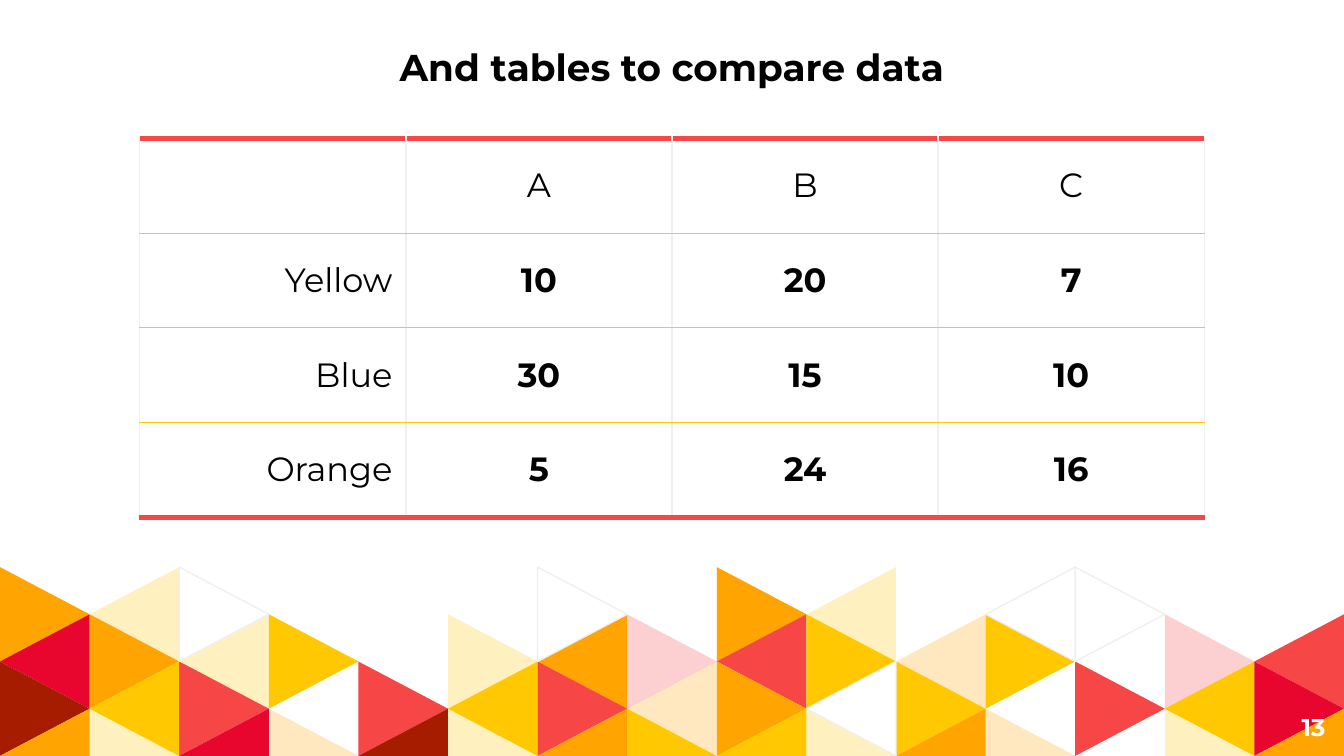
"""Build a slide with a comparison table above a band of coloured triangles."""
from lxml import etree
from pptx import Presentation
from pptx.dml.color import RGBColor
from pptx.enum.text import MSO_ANCHOR, PP_ALIGN
from pptx.oxml.ns import qn
from pptx.util import Inches, Pt

CENTER, RIGHT = PP_ALIGN.CENTER, PP_ALIGN.RIGHT
MIDDLE, BOTTOM = MSO_ANCHOR.MIDDLE, MSO_ANCHOR.BOTTOM
FONT = "Montserrat"

BLACK = RGBColor(0x00, 0x00, 0x00)
WHITE = RGBColor(0xFF, 0xFF, 0xFF)
GRAY = RGBColor(0xEF, 0xEF, 0xEF)
ORANGE = RGBColor(0xFF, 0xA4, 0x00)
YELLOW = RGBColor(0xFF, 0xC8, 0x00)
CORAL = RGBColor(0xF6, 0x46, 0x46)
CRIMSON = RGBColor(0xE8, 0x06, 0x2F)
BROWN = RGBColor(0xA6, 0x1C, 0x00)

WIDTH, HEIGHT = 10, 10 * 9 / 16
BAND_TOP = 4.22
PALE = 25
TILES = {
    "O": (ORANGE, None), "o": (ORANGE, PALE),
    "Y": (YELLOW, None), "y": (YELLOW, PALE),
    "R": (CORAL, None), "r": (CORAL, PALE),
    "E": (CRIMSON, None), "B": (BROWN, None), "W": (WHITE, None),
}
BAND = [
    "OyW...W.Oy.WW..",
    "EOCY.yOrRYoY.rR".replace("C", "y"),
    "BYR.RYRoOWY.RYE",
    "OyEoByOYYyOo.yO",
]

DATA = [
    ["", "A", "B", "C"],
    ["Yellow", "10", "20", "7"],
    ["Blue", "30", "15", "10"],
    ["Orange", "5", "24", "16"],
]


def write_text(tf, text, size=18, color=BLACK, bold=False, align=CENTER):
    """Write one formatted paragraph into a text frame."""
    p = tf.paragraphs[0]
    p.alignment = align
    r = p.add_run()
    r.text = text
    r.font.name = FONT
    r.font.size = Pt(size)
    r.font.bold = bold
    r.font.color.rgb = color


def add_text(s, text, left, top, width, height, anchor=MIDDLE, **style):
    """Add a wrapped text box with even insets."""
    sp = s.shapes.add_textbox(Inches(left), Inches(top), Inches(width), Inches(height))
    tf = sp.text_frame
    tf.word_wrap = True
    tf.vertical_anchor = anchor
    tf.margin_left = tf.margin_right = tf.margin_top = tf.margin_bottom = Inches(0.1)
    write_text(tf, text, **style)


def add_triangle(s, col, row, color, alpha):
    """Add one tile of the band, cut off at the bottom edge of the slide."""
    rows = len(BAND)
    step_x = WIDTH / len(BAND[0])
    step_y = (HEIGHT - BAND_TOP) / rows
    base, tip = (col, col + 1) if (col + row) % 2 == 0 else (col + 1, col)
    low = (base, min(row + 2, rows))
    grid = [(base, row), (tip, row + 1), low]
    points = [(Inches(x * step_x), Inches(BAND_TOP + y * step_y)) for x, y in grid]
    builder = s.shapes.build_freeform(*points[0])
    builder.add_line_segments(points[1:], close=True)
    sp = builder.convert_to_shape()
    sp.shadow.inherit = False
    sp.fill.solid()
    sp.fill.fore_color.rgb = color
    if alpha:
        clr = sp._element.spPr.find(".//" + qn("a:srgbClr"))
        etree.SubElement(clr, qn("a:alpha"), val=str(alpha * 1000))
    if color == WHITE:
        sp.line.color.rgb = GRAY
        sp.line.width = Pt(0.75)
    else:
        sp.line.fill.background()


def add_band(s):
    """Add all tiles, with the outlined white ones on top."""
    tiles = [(col, row, *TILES[code]) for row, codes in enumerate(BAND)
             for col, code in enumerate(codes) if code in TILES]
    for tile in sorted(tiles, key=lambda t: t[2] == WHITE):
        add_triangle(s, *tile)


def set_borders(cell, **sides):
    """Set cell borders, each side given as a colour and a width in points."""
    tc_pr = cell._tc.get_or_add_tcPr()
    for i, side in enumerate("LRTB"):
        color, width = sides[side]
        ln = etree.Element(qn("a:ln" + side), w=str(Pt(width)))
        fill = etree.SubElement(ln, qn("a:solidFill"))
        etree.SubElement(fill, qn("a:srgbClr"), val=str(color))
        tc_pr.insert(i, ln)


def add_data_table(s, left, top, col_width, row_height):
    """Add the data table with thick outer rules and thin inner ones."""
    rows, cols = len(DATA), len(DATA[0])
    table = s.shapes.add_table(rows, cols, Inches(left), Inches(top),
                               Inches(cols * col_width), Inches(rows * row_height)).table
    table.first_row = table.horz_banding = False
    thick, thin, side = (CORAL, 3), (YELLOW, 0.75), (GRAY, 0.75)
    for i, values in enumerate(DATA):
        for j, value in enumerate(values):
            cell = table.cell(i, j)
            cell.fill.background()
            cell.vertical_anchor = MIDDLE
            cell.margin_left = cell.margin_right = Inches(0.1)
            cell.margin_top = cell.margin_bottom = Inches(0.07)
            set_borders(cell, L=side, R=side, T=thick if i == 0 else thin,
                        B=thick if i == rows - 1 else thin)
            if value:
                write_text(cell.text_frame, value, bold=i > 0 and j > 0,
                           align=RIGHT if j == 0 else CENTER)


def main():
    """Build and save the slide."""
    prs = Presentation()
    prs.slide_width, prs.slide_height = Inches(WIDTH), Inches(HEIGHT)
    s = prs.slides.add_slide(prs.slide_layouts[6])
    add_band(s)
    add_text(s, "And tables to compare data", 0, 0, WIDTH, 0.76,
             anchor=BOTTOM, size=20, bold=True)
    add_data_table(s, 1.04, 1.03, 1.98, 2.82 / len(DATA))
    add_text(s, "13", 9.36, 5.19, 0.6, 0.43, size=13, color=WHITE, bold=True, align=RIGHT)
    prs.save("out.pptx")


if __name__ == "__main__":
    main()
